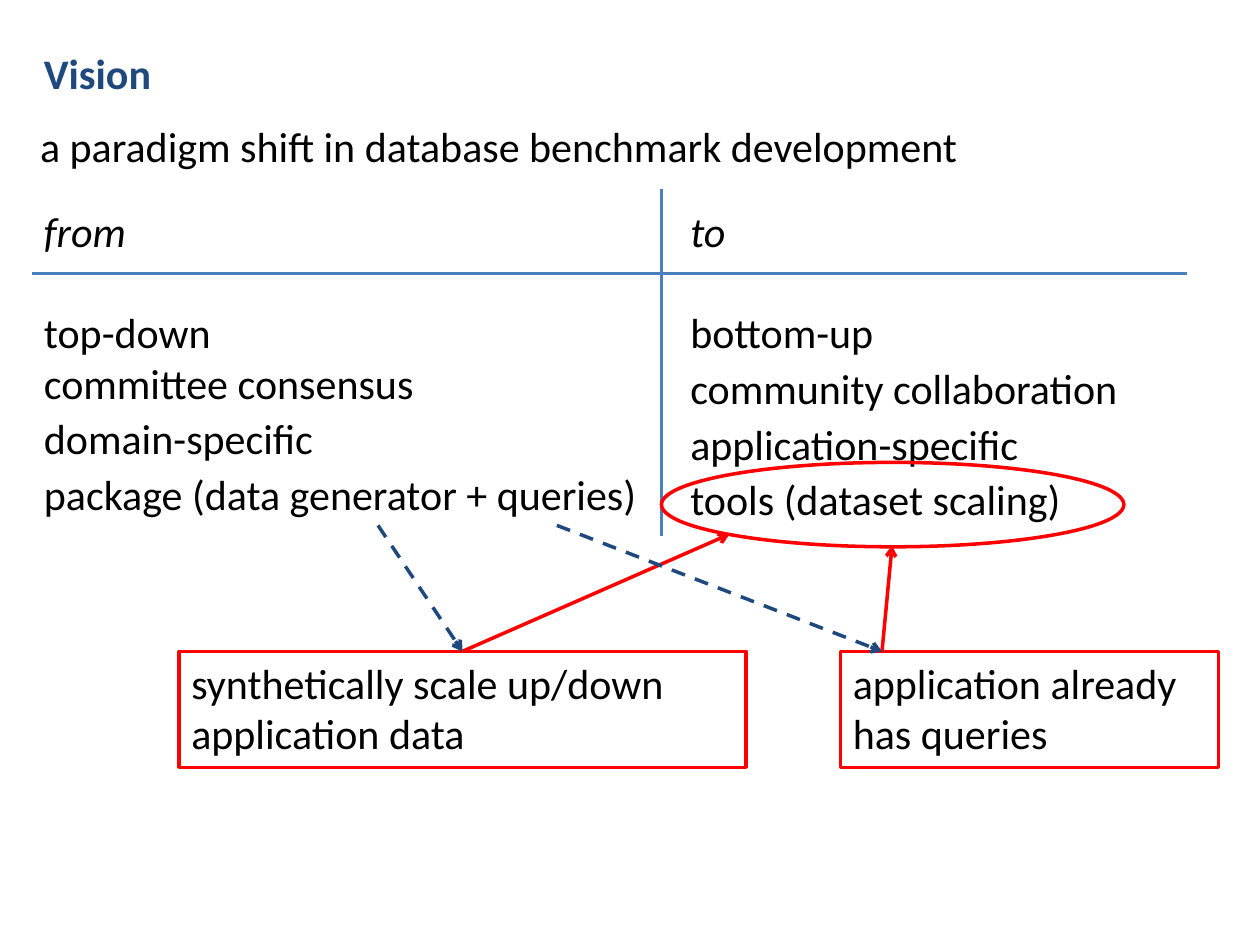
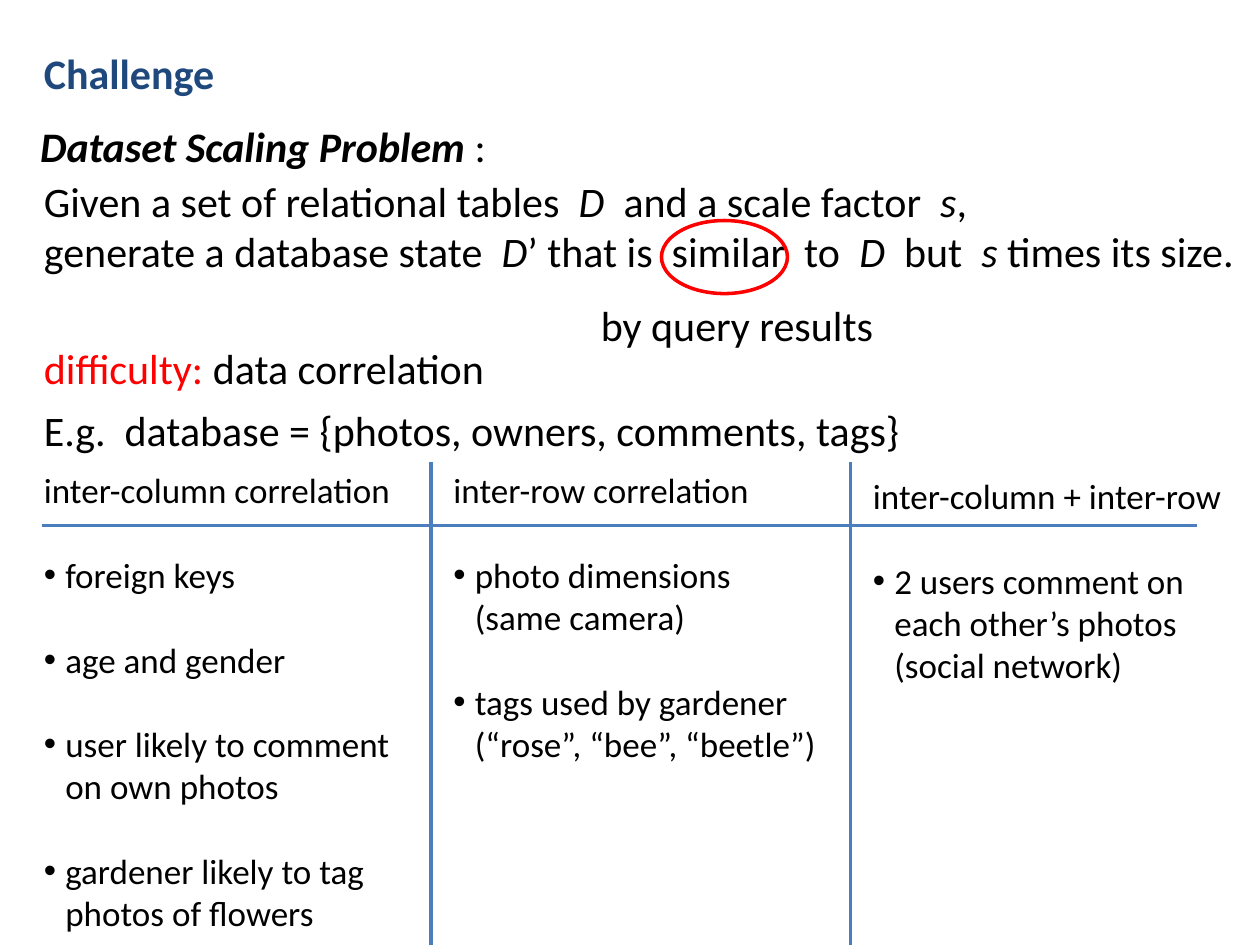
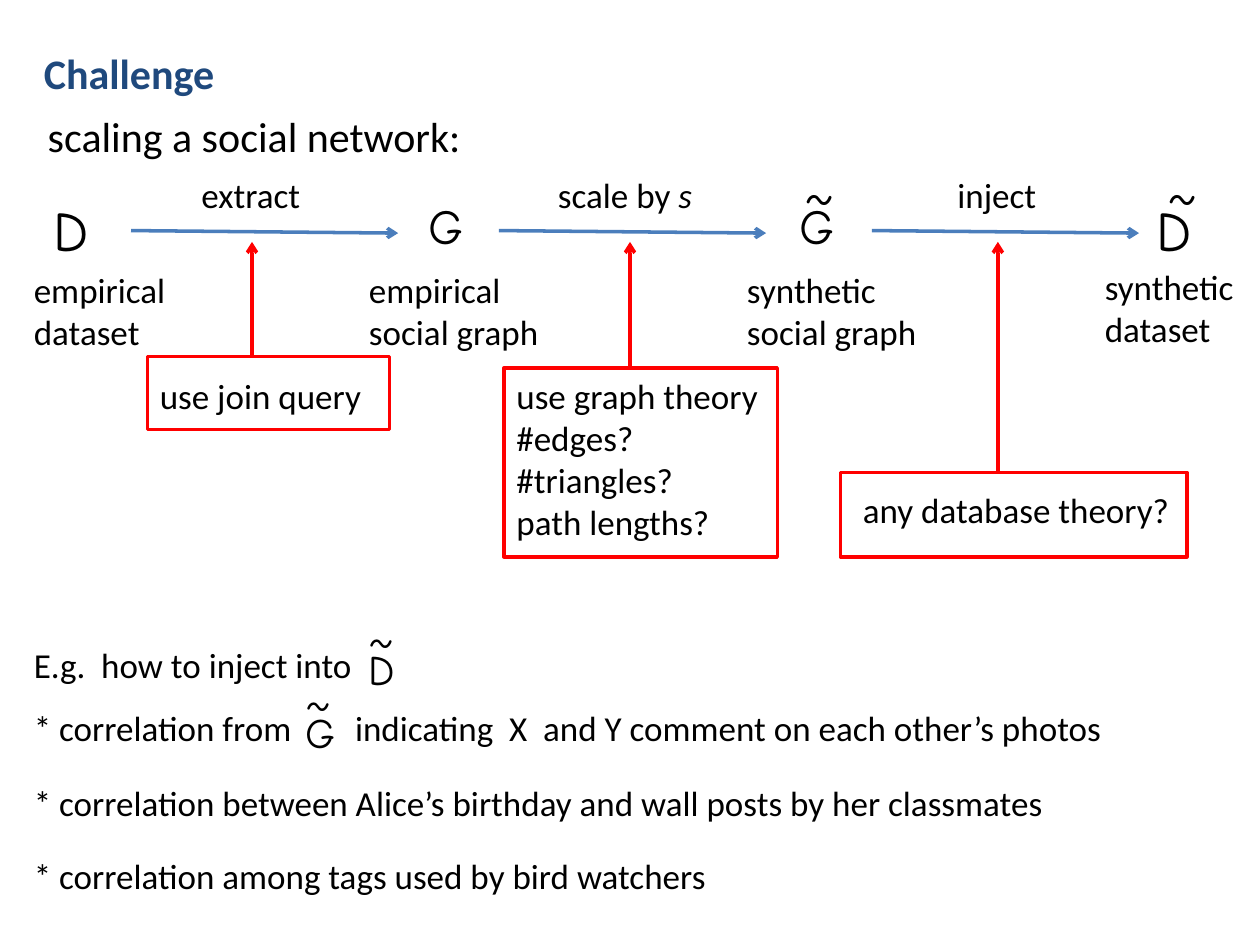
import pptx
import pptx.dml.color
import pptx.enum.dml
import pptx.enum.shapes
import pptx.enum.text
import pptx.oxml
import pptx.util
from pptx.oxml.ns import qn
from lxml import etree

Inches, Pt = pptx.util.Inches, pptx.util.Pt
SHAPE = pptx.enum.shapes.MSO_SHAPE

COLORS = {"navy": "1F497D", "black": "000000", "red": "FF0000", "rule": "4B7EBC"}
SANS, HAND = "Calibri", "Comic Neue"
LINE = 1.22  # line height as a share of the text size


def color(name):
    return pptx.dml.color.RGBColor.from_string(COLORS[name])


# Shared parts
def text(slide, x, y, w, paras, size=24, wrap=True, h=None, font=SANS, hue="black"):
    """Each paragraph is a string, or a list of (words, style); b, i and r set the style."""
    h = h or 0.1 + len(paras) * size * LINE / 72
    box = slide.shapes.add_textbox(Inches(x), Inches(y), Inches(w), Inches(h))
    frame = box.text_frame
    frame.word_wrap = wrap
    frame.auto_size = pptx.enum.text.MSO_AUTO_SIZE.SHAPE_TO_FIT_TEXT
    for n, para in enumerate(paras):
        p = frame.add_paragraph() if n else frame.paragraphs[0]
        p.font.name, p.font.size = font, Pt(size)
        p.font.color.rgb = color(hue)
        if isinstance(para, str):
            p.text = para
            continue
        for words, style in para:
            run = p.add_run()
            run.text = words
            if "b" in style:
                run.font.bold = True
            if "i" in style:
                run.font.italic = True
            if "r" in style:
                run.font.color.rgb = color("red")
    return frame.paragraphs


def frame(slide, kind, x, y, w, h):
    shape = slide.shapes.add_shape(kind, Inches(x), Inches(y), Inches(w), Inches(h))
    shape.shadow.inherit = False
    shape.fill.background()
    shape.line.color.rgb = color("red")
    shape.line.width = Pt(2)
    return shape


def line(slide, x1, y1, x2, y2, hue="rule", arrow=False, dash=False):
    link = slide.shapes.add_connector(
        pptx.enum.shapes.MSO_CONNECTOR.STRAIGHT,
        Inches(x1), Inches(y1), Inches(x2), Inches(y2))
    link.line.color.rgb = color(hue)
    link.line.width = Pt(2)
    if dash:
        link.line.dash_style = pptx.enum.dml.MSO_LINE.DASH
    if arrow:
        etree.SubElement(link.line._get_or_add_ln(), qn("a:tailEnd"), type="arrow")
    etree.SubElement(link._element.spPr, qn("a:effectLst"))
    return link


def page(deck, title, width):
    slide = deck.slides.add_slide(deck.slide_layouts[6])
    p = text(slide, 0.25, 0.33, width, [title], wrap=False, hue="navy")[0]
    p.font.bold = True
    return slide


def bullet(p, hang=0.17):
    props = p._p.get_or_add_pPr()
    props.set("marL", str(Inches(hang)))
    props.set("indent", str(-Inches(hang)))
    mark = pptx.oxml.parse_xml(
        '<a:buChar xmlns:a="http://schemas.openxmlformats.org/drawingml/2006/main" char="•"/>')
    face = etree.Element(qn("a:buFont"), typeface="Arial")
    props.find(qn("a:defRPr")).addprevious(face)
    face.addnext(mark)


# Vision
def column(slide, x, y, w, h, head, items):
    paras = text(slide, x, y, w, [[(head, "i")]] + items, wrap=False, h=h)
    paras[1].space_before = Pt(24 * LINE)
    for p in paras[1:]:
        p.space_after = Pt(3)


def shift(slide, x, y):
    column(slide, x, y + 0.08, 4.95, 2.61, "from",
           ["top-down\vcommittee consensus", "domain-specific",
            "package (data generator + queries)"])
    line(slide, x, y + 0.67, x + 9.17, y + 0.67)
    column(slide, x + 5.13, y + 0.08, 3.62, 2.65, "to",
           ["bottom-up", "community collaboration", "application-specific",
            "tools (dataset scaling)"])
    line(slide, x + 5, y, x + 5, y + 2.75)
    frame(slide, SHAPE.OVAL, x + 5, y + 2.17, 3.67, 0.67)


def reason(slide, x, y, w, wide, words, top, goal, source):
    text(slide, x, y, wide, words, wrap=False)
    box = frame(slide, SHAPE.RECTANGLE, x, y, w, 0.92)
    up = line(slide, x + top, y, *goal, hue="red", arrow=True)
    down = line(slide, *source, x + top, y, hue="navy", arrow=True, dash=True)
    if abs(top - w / 2) < 0.01:
        up.begin_connect(box, 0)
        down.end_connect(box, 0)


def vision(deck):
    slide = page(deck, "Vision", 1.06)
    text(slide, 0.22, 0.91, 7.56,
         ["a paradigm shift in database benchmark development"], wrap=False)
    shift(slide, 0.25, 1.5)
    reason(slide, 1.42, 5.17, 4.5, 4.06,
           ["synthetically scale up/down", "application data"],
           2.25, (5.79, 4.24), (3, 4.17))
    reason(slide, 6.67, 5.17, 3, 2.87, ["application already", "has queries"],
           0.33, (7.08, 4.33), (4.42, 4.17))


# Challenge: the problem
def problem(slide, x, y):
    text(slide, x - 0.03, y, 3.74, [[("Dataset Scaling Problem ", "bi"), (":", "")]],
         wrap=False)
    text(slide, x, y + 0.43, 9.72, [
        [("Given a set of relational tables  ", ""), ("D", "i"),
         ("  and a scale factor  ", ""), ("s", "i"), (",", "")],
        [("generate a database state  ", ""), ("D", "i"),
         ("’ that is  similar  to  ", ""), ("D", "i"), ("  but  ", ""),
         ("s", "i"), (" times its size.", "")]], wrap=False)
    frame(slide, SHAPE.OVAL, x + 5, y + 0.84, 1, 0.58)
    text(slide, x + 4.42, y + 1.42, 2.42, ["by query results"])
    text(slide, x, y + 1.76, 3.75, [[("difficulty: ", "r"), ("data correlation", "")]])
    text(slide, x, y + 2.25, 7.33, ["E.g.  database = {photos, owners, comments, tags}"])


def listing(slide, x, y, w, h, head, items):
    paras = text(slide, x, y, w, [head] + items, size=20, h=h)
    for p in paras[1:]:
        p.space_before = Pt(20 * LINE)
        bullet(p)


def kinds(slide, x, y):
    listing(slide, x, y, 3.33, 3.8, "inter-column correlation",
            ["foreign keys", "age and gender", "user likely to comment\von own photos",
             "gardener likely to tag\vphotos of flowers"])
    listing(slide, x + 3.25, y, 3.25, 2.79, "inter-row correlation",
            ["photo dimensions\v(same camera)",
             "tags used by gardener\v(“rose”, “bee”, “beetle”)"])
    listing(slide, x + 6.58, y + 0.05, 3, 1.78, "inter-column + inter-row",
            ["2 users comment on\veach other’s photos\v(social network)"])
    line(slide, x + 0.08, y + 0.5, x + 9.25, y + 0.5)
    for edge in (3.17, 6.5):
        line(slide, x + edge, y, x + edge, y + 3.83)


def challenge(deck):
    slide = page(deck, "Challenge", 1.57)
    problem(slide, 0.25, 0.91)
    kinds(slide, 0.25, 3.67)


# Challenge: scaling a social network
def glyph(slide, x, y, letter, size, tilde=None, mark=28):
    """The tilde, when given, is the sideways offset of the mark over the letter."""
    text(slide, x, y, 0.46, [letter], size, wrap=False, font=HAND)
    if tilde is not None:
        text(slide, x + tilde, y - 0.25, 0.46, ["~"], mark, wrap=False, font=HAND)


def flow(slide, x, y):
    nodes = [  # letter, size, left, tilde, label left, label top, label width, label
        ("D", 32, 0.16, None, 0, 0.58, 1.25, ["empirical", "dataset"]),
        ("G", 28, 3.13, None, 2.66, 0.58, 1.58, ["empirical", "social graph"]),
        ("G", 28, 6.08, 0.04, 5.66, 0.58, 1.58, ["synthetic", "social graph"]),
        ("D", 32, 8.91, 0.09, 8.5, 0.56, 1.33, ["synthetic", "dataset"])]
    for letter, size, left, tilde, side, top, w, label in nodes:
        glyph(slide, x + left, y, letter, size, tilde)
        text(slide, x + side, y + top, w, label, 20)
    steps = [  # arrow left, label left, label
        (0.87, 1.33, "extract"),
        (3.79, 4.16, [("scale by ", ""), ("s", "i")]),
        (6.75, 7.33, "inject")]
    for left, side, label in steps:
        line(slide, x + left, y + 0.33, x + left + 2.12, y + 0.35, arrow=True)
        text(slide, x + side, y - 0.17, 1.33, [label], 20)


def advice(slide, x, y, w, h, words, dx, dy, wide, stem, tip):
    frame(slide, SHAPE.RECTANGLE, x, y, w, h)
    text(slide, x + dx, y + dy, wide, words, 20)
    line(slide, x + stem, y, x + stem, tip, hue="red", arrow=True)


def cases(slide, x, y):
    text(slide, x, y, 3.17, ["E.g.  how to inject into"], 20)
    glyph(slide, x + 2.66, y, "D", 24, 0, 24)
    p = text(slide, x, y + 0.5, 9.83, [
        "* correlation from\tindicating  X  and Y comment on each other’s photos"], 20)[0]
    stops = etree.Element(qn("a:tabLst"))
    etree.SubElement(stops, qn("a:tab"), pos=str(Inches(2.55)), algn="l")
    p._p.pPr.find(qn("a:defRPr")).addprevious(stops)
    glyph(slide, x + 2.16, y + 0.5, "G", 24, 0, 24)
    more = ["* correlation between Alice’s birthday and wall posts by her classmates",
            "* correlation among tags used by bird watchers"]
    for n, words in enumerate(more):
        text(slide, x, y + 1.09 + n * 0.58, 9.17, [words], 20)


def network(deck):
    slide = page(deck, "Challenge", 1.57)
    text(slide, 0.28, 0.83, 3.51, ["scaling a social network:"], wrap=False)
    flow(slide, 0.17, 1.5)
    advice(slide, 1.17, 2.83, 1.92, 0.58, ["use join query"], 0, 0.09, 1.83, 0.83, 1.92)
    advice(slide, 4, 2.92, 2.17, 1.5,
           ["use graph theory", "#edges?", "#triangles?", "path lengths?"],
           0, 0, 2.25, 1, 1.92)
    advice(slide, 6.67, 3.75, 2.75, 0.67, ["any database theory?"],
           0.08, 0.08, 2.67, 1.25, 1.92)
    cases(slide, 0.17, 5.06)


def main():
    deck = pptx.Presentation()
    deck.slide_width, deck.slide_height = Inches(10), Inches(7.5)
    vision(deck)
    challenge(deck)
    network(deck)
    deck.save("out.pptx")


if __name__ == "__main__":
    main()
